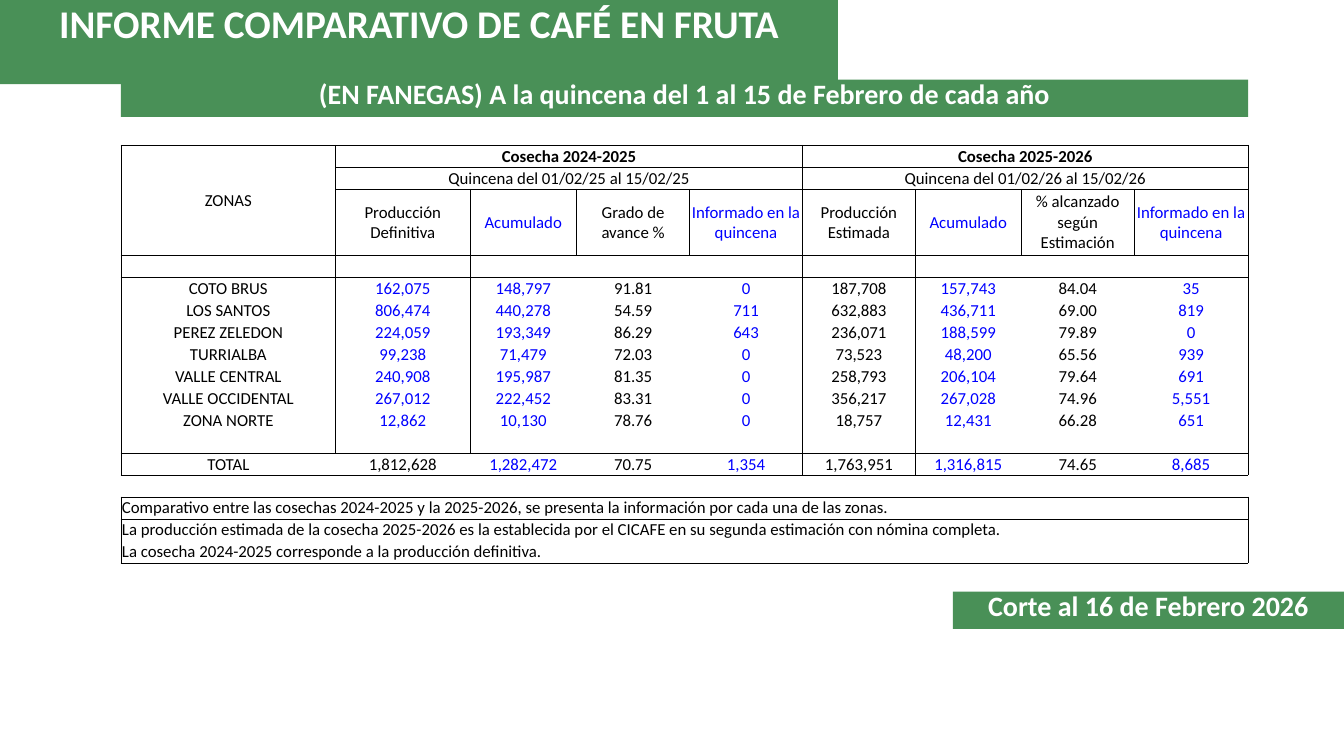
from dataclasses import dataclass

from lxml.etree import SubElement
from pptx import Presentation
from pptx.dml.color import RGBColor
from pptx.enum.shapes import MSO_SHAPE as Shape
from pptx.enum.text import MSO_ANCHOR as Anchor, MSO_AUTO_SIZE as AutoSize, PP_ALIGN as Align
from pptx.oxml.ns import qn
from pptx.util import Inches, Pt


@dataclass(frozen=True)
class Theme:
    font: str = "Calibri"
    green: str = "499057"
    white: str = "FFFFFF"
    black: str = "000000"
    blue: str = "0000FF"
    title_size: int = 28
    banner_size: int = 20
    table_size: int = 12
    border_width: float = 0.5
    plain_table: str = "{2D5ABB26-0587-4C30-8999-92F81FD0307C}"


COLUMN_WIDTHS = [2.13, 1.33, 1.06, 1.12, 1.12, 1.12, 1.05, 1.12, 1.13]
COLUMN_COUNT = len(COLUMN_WIDTHS)
GROUP_STARTS, GROUP_ENDS = (0, 1, 5), (0, 4, 8)
HARVESTS = [
    ("Cosecha 2024-2025", "Quincena del 01/02/25 al 15/02/25"),
    ("Cosecha 2025-2026", "Quincena del 01/02/26 al 15/02/26"),
]
HEADINGS = [
    "ZONAS", "Producción Definitiva", "Acumulado", "Grado de avance %", "Informado en la quincena",
    "Producción Estimada", "Acumulado", "% alcanzado según Estimación", "Informado en la quincena",
]
ZONES = [
    ["COTO BRUS", "162,075", "148,797", "91.81", "0", "187,708", "157,743", "84.04", "35"],
    ["LOS SANTOS", "806,474", "440,278", "54.59", "711", "632,883", "436,711", "69.00", "819"],
    ["PEREZ ZELEDON", "224,059", "193,349", "86.29", "643", "236,071", "188,599", "79.89", "0"],
    ["TURRIALBA", "99,238", "71,479", "72.03", "0", "73,523", "48,200", "65.56", "939"],
    ["VALLE CENTRAL", "240,908", "195,987", "81.35", "0", "258,793", "206,104", "79.64", "691"],
    ["VALLE OCCIDENTAL", "267,012", "222,452", "83.31", "0", "356,217", "267,028", "74.96", "5,551"],
    ["ZONA NORTE", "12,862", "10,130", "78.76", "0", "18,757", "12,431", "66.28", "651"],
]
TOTAL = ["TOTAL", "1,812,628", "1,282,472", "70.75", "1,354", "1,763,951", "1,316,815", "74.65", "8,685"]
NOTES = [
    "Comparativo entre las cosechas 2024-2025 y la 2025-2026, se presenta la información por cada una de las zonas.",
    "La producción estimada de la cosecha 2025-2026 es la establecida por el CICAFE en su segunda estimación"
    " con nómina completa.",
    "La cosecha 2024-2025 corresponde a la producción definitiva.",
]
BLANK = [""] * COLUMN_COUNT
BODY = [BLANK, *ZONES, BLANK]
HEADING_ROW, BODY_START = 2, 3
TOTAL_ROW = BODY_START + len(BODY)
NOTES_START = TOTAL_ROW + 2
ROW_COUNT = NOTES_START + len(NOTES)


def apply(target, values):
    for name, value in values.items():
        setattr(target, name, value)


class CoffeeReport:
    """Draws the coffee harvest report on one slide."""

    def __init__(self, theme):
        self.theme = theme
        self.presentation = Presentation()
        apply(self.presentation, {"slide_width": Inches(13.33), "slide_height": Inches(7.5)})
        self.slide = self.presentation.slides.add_slide(self.presentation.slide_layouts[5])

    def add_text(self, paragraph, text, size, color, bold=False, align=Align.CENTER):
        paragraph.alignment = align
        if not text:
            paragraph._p.get_or_add_endParaRPr().set("sz", str(size * 100))
            return
        run = paragraph.add_run()
        run.text = text
        apply(run.font, {"name": self.theme.font, "size": Pt(size), "bold": bold})
        run.font.color.rgb = RGBColor.from_string(color)

    def fill_banner(self, shape, text, size, frame_values):
        shape.fill.solid()
        shape.fill.fore_color.rgb = RGBColor.from_string(self.theme.green)
        shape.line.fill.background()
        apply(shape.text_frame, {"word_wrap": True, **frame_values})
        paragraph = shape.text_frame.paragraphs[0]
        paragraph.line_spacing = 0.9
        self.add_text(paragraph, text, size, self.theme.white, bold=True)

    def title(self, text, left, top, width, height):
        shape = self.slide.shapes.title
        apply(shape, {"left": Inches(left), "top": Inches(top),
                      "width": Inches(width), "height": Inches(height)})
        self.fill_banner(shape, text, self.theme.title_size,
                         {"vertical_anchor": Anchor.TOP, "auto_size": AutoSize.SHAPE_TO_FIT_TEXT})

    def banner(self, text, left, top, width, height):
        shape = self.slide.shapes.add_shape(
            Shape.RECTANGLE, Inches(left), Inches(top), Inches(width), Inches(height))
        shape.shadow.inherit = False
        self.fill_banner(shape, text, self.theme.banner_size,
                         {"vertical_anchor": Anchor.MIDDLE, "margin_top": 0, "margin_bottom": Inches(0.05)})

    def border(self, cell, sides):
        properties = cell._tc.get_or_add_tcPr()
        for side in "LRTB":
            if side in sides:
                line = SubElement(properties, qn(f"a:ln{side}"), w=str(Pt(self.theme.border_width)))
                SubElement(SubElement(line, qn("a:solidFill")), qn("a:srgbClr"), val=self.theme.black)

    def cell(self, cell, text, sides, color=None, bold=False, anchor=Anchor.BOTTOM, align=Align.CENTER):
        margin = Inches(0.01)
        apply(cell, {"margin_left": margin, "margin_right": margin, "margin_top": margin,
                     "margin_bottom": 0, "vertical_anchor": anchor})
        self.border(cell, sides)
        cell.fill.background()
        self.add_text(cell.text_frame.paragraphs[0], text, self.theme.table_size,
                      color or self.theme.black, bold, align)

    def table(self, left, top, width, height):
        table = self.slide.shapes.add_table(
            ROW_COUNT, COLUMN_COUNT, Inches(left), Inches(top), Inches(width), Inches(height)).table
        apply(table, {"first_row": False, "horz_banding": False})
        table._tbl.tblPr.find(qn("a:tableStyleId")).text = self.theme.plain_table
        for column, column_width in zip(table.columns, COLUMN_WIDTHS):
            column.width = Inches(column_width)
        unit = height / (ROW_COUNT + 2)
        for index, row in enumerate(table.rows):
            row.height = Inches(unit * (3 if index == HEADING_ROW else 1))
        self.headings(table)
        self.figures(table)
        self.notes(table)

    def headings(self, table):
        table.cell(0, 0).merge(table.cell(HEADING_ROW, 0))
        for start, end, lines in zip(GROUP_STARTS[1:], GROUP_ENDS[1:], HARVESTS):
            for row in range(HEADING_ROW):
                table.cell(row, start).merge(table.cell(row, end))
                for column in range(start, end + 1):
                    text = lines[row] if column == start else ""
                    self.cell(table.cell(row, column), text, "LRTB", bold=row == 0)
        for column, text in enumerate(HEADINGS):
            row = HEADING_ROW if column else 0
            color = self.theme.blue if column in (2, 4, 6, 8) else self.theme.black
            self.cell(table.cell(row, column), text, "LRTB", color, anchor=Anchor.MIDDLE)
        for row in range(1, HEADING_ROW + 1):
            self.cell(table.cell(row, 0), "", "LRTB")

    def figures(self, table):
        for row, values in enumerate([*BODY, TOTAL, BLANK], BODY_START):
            for column, text in enumerate(values):
                sides = "L" if column in GROUP_STARTS else ""
                sides += "R" if column in GROUP_ENDS else ""
                if row == TOTAL_ROW and column < 2:
                    sides = "" if column else "L"
                if row > TOTAL_ROW:
                    sides = ""
                sides += "T" if row == BODY_START or row >= TOTAL_ROW else ""
                sides += "B" if row >= TOTAL_ROW - 1 else ""
                blue_columns = (2, 4, 6, 8) if row == TOTAL_ROW else (1, 2, 4, 6, 8)
                color = self.theme.blue if column in blue_columns else self.theme.black
                self.cell(table.cell(row, column), text, sides, color)

    def notes(self, table):
        for row, (text, edge) in enumerate(zip(NOTES, ("T", "", "B")), NOTES_START):
            table.cell(row, 0).merge(table.cell(row, COLUMN_COUNT - 1))
            for column in range(COLUMN_COUNT):
                self.cell(table.cell(row, column), "" if column else text, "LR" + edge,
                          anchor=Anchor.TOP, align=Align.LEFT)


def main():
    report = CoffeeReport(Theme())
    report.title("INFORME COMPARATIVO DE CAFÉ EN FRUTA", 0, 0, 8.31, 0.53)
    report.banner("(EN FANEGAS) A la quincena del 1 al 15 de Febrero de cada año", 1.2, 0.79, 11.18, 0.37)
    report.banner("Corte al 16 de Febrero 2026", 9.45, 5.87, 3.88, 0.37)
    report.table(1.2, 1.44, 11.18, 4.15)
    report.presentation.save("out.pptx")


if __name__ == "__main__":
    main()
